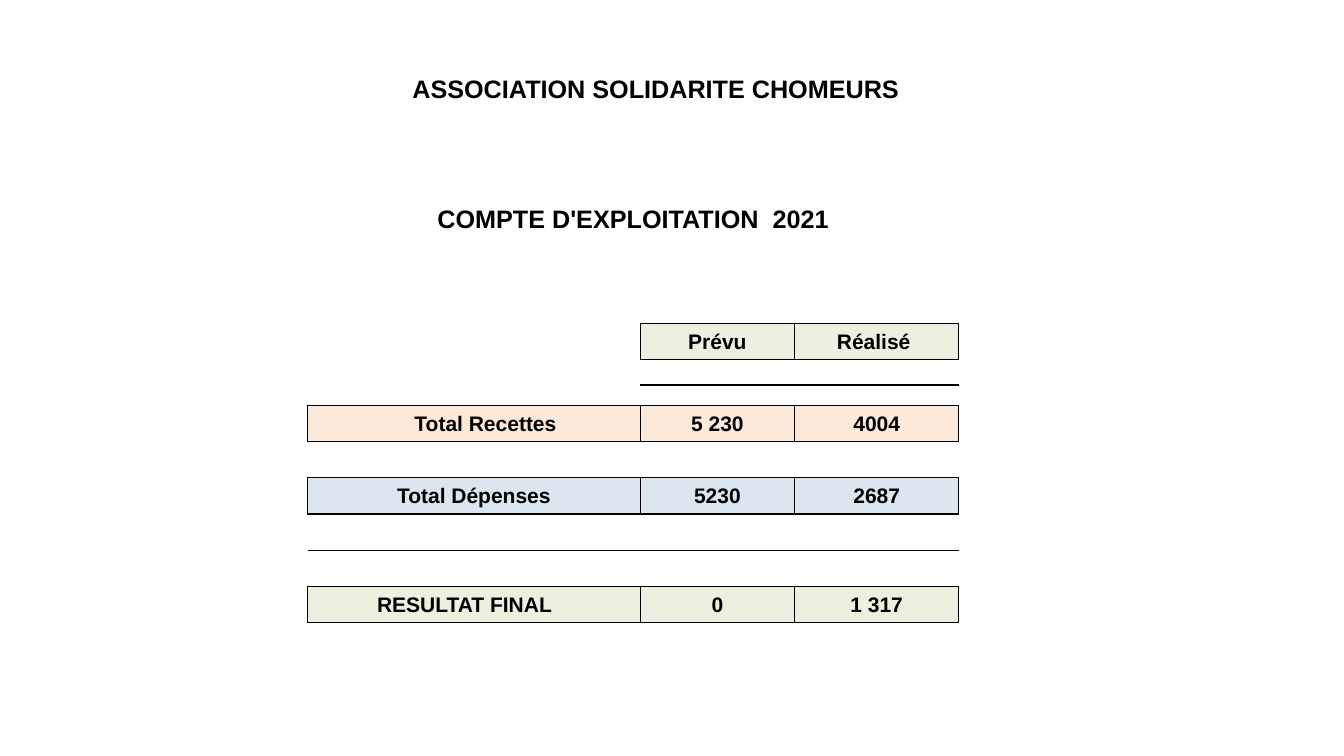
import pptx
import pptx.util
import pptx.dml.color
import pptx.enum.text
import lxml.etree
from dataclasses import dataclass
from pptx.util import Inches

# Content: row index -> cell texts
HEADINGS = {0: "ASSOCIATION SOLIDARITE CHOMEURS",
            3: "COMPTE D'EXPLOITATION  2021"}
ACCOUNTS = {7: ("", "Prévu", "Réalisé"),
            10: ("Total Recettes", "5 230", "4004"),
            12: ("Total Dépenses", "5230", "2687"),
            15: ("RESULTAT FINAL", "0", "1 317")}


@dataclass(frozen=True)
class Theme:
    font: str = "Arial"
    heading_size: int = 18
    body_size: int = 15
    empty_size: int = 8
    ink: str = "000000"
    paper: str = "FFFFFF"
    green: str = "EBF1DE"
    orange: str = "FDE9D9"
    blue: str = "DCE6F1"
    border_width: int = 1


THEME = Theme()
ROW_FILLS = {7: THEME.green, 10: THEME.orange, 12: THEME.blue, 15: THEME.green}

# Layout in inches
LEFT, TOP = 3.05, 0.6
COLS = [3.3, 1.53, 1.63]
ROWS = [0.43] * 4 + [0.32] * 2 + [0.25, 0.36, 0.25, 0.2] + [0.36] * 6
MARGIN = 0.01
LEFT_INDENTS = {(0, 0): 1.04, (15, 0): 0.69}  # left-aligned cells
SHIFTS = {(10, 0): (0.24, MARGIN), (7, 2): (MARGIN, 0.07)}  # off-centre cells
SIDES = {"lnL": (0, -1), "lnR": (0, 1), "lnT": (-1, 0), "lnB": (1, 0)}

A = "http://schemas.openxmlformats.org/drawingml/2006/main"
PLAIN_STYLE = "{2D5ABB26-0587-4C30-8999-92F81FD0307C}"


def is_boxed(row, col):
    return (row in ACCOUNTS and 0 <= col < len(COLS)
            and ACCOUNTS[row][col] != "")


def add_borders(cell, row, col):
    """Draw each side that touches a boxed cell."""
    tc_pr = cell._tc.get_or_add_tcPr()
    for tag, (dr, dc) in SIDES.items():
        if is_boxed(row, col) or is_boxed(row + dr, col + dc):
            ln = lxml.etree.SubElement(tc_pr, f"{{{A}}}{tag}")
            ln.set("w", str(pptx.util.Pt(THEME.border_width)))
            fill = lxml.etree.SubElement(ln, f"{{{A}}}solidFill")
            lxml.etree.SubElement(fill, f"{{{A}}}srgbClr").set("val", THEME.ink)


def write_text(cell, row, col, text):
    p = cell.text_frame.paragraphs[0]
    if not text:
        # A small end mark keeps empty rows at their set height
        end = lxml.etree.SubElement(p._p, f"{{{A}}}endParaRPr")
        end.set("sz", str(THEME.empty_size * 100))
        return
    p.text = text
    if (row, col) in LEFT_INDENTS:
        p.alignment = pptx.enum.text.PP_ALIGN.LEFT
        cell.margin_left = Inches(LEFT_INDENTS[row, col])
    else:
        p.alignment = pptx.enum.text.PP_ALIGN.CENTER
        left, right = SHIFTS.get((row, col), (MARGIN, MARGIN))
        cell.margin_left, cell.margin_right = Inches(left), Inches(right)
    font = p.runs[0].font
    font.name = THEME.font
    font.bold = True
    font.size = pptx.util.Pt(
        THEME.heading_size if row in HEADINGS else THEME.body_size)
    font.color.rgb = pptx.dml.color.RGBColor.from_string(THEME.ink)


def fill_cell(cell, row, col):
    add_borders(cell, row, col)
    color = ROW_FILLS[row] if is_boxed(row, col) else THEME.paper
    cell.fill.solid()
    cell.fill.fore_color.rgb = pptx.dml.color.RGBColor.from_string(color)
    cell.margin_left = cell.margin_right = cell.margin_top = Inches(MARGIN)
    cell.margin_bottom = 0
    anchor = pptx.enum.text.MSO_ANCHOR
    cell.vertical_anchor = anchor.BOTTOM if row in HEADINGS else anchor.MIDDLE
    if row in HEADINGS:
        text = HEADINGS[row] if col == 0 else ""
    else:
        text = ACCOUNTS[row][col] if row in ACCOUNTS else ""
    write_text(cell, row, col, text)


def main():
    prs = pptx.Presentation()
    prs.slide_width, prs.slide_height = Inches(13.33), Inches(7.5)
    s = prs.slides.add_slide(prs.slide_layouts[6])

    # Account table
    frame = s.shapes.add_table(len(ROWS), len(COLS), Inches(LEFT), Inches(TOP),
                               Inches(sum(COLS)), Inches(sum(ROWS)))
    table = frame.table
    table.first_row = table.horz_banding = False
    table._tbl.tblPr.find(f"{{{A}}}tableStyleId").text = PLAIN_STYLE
    for column, width in zip(table.columns, COLS):
        column.width = Inches(width)
    for row, height in enumerate(ROWS):
        table.rows[row].height = Inches(height)
        for col in range(len(COLS)):
            fill_cell(table.cell(row, col), row, col)

    # Headings run across the whole table
    for row in HEADINGS:
        table.cell(row, 0).merge(table.cell(row, len(COLS) - 1))

    prs.save("out.pptx")


if __name__ == "__main__":
    main()
